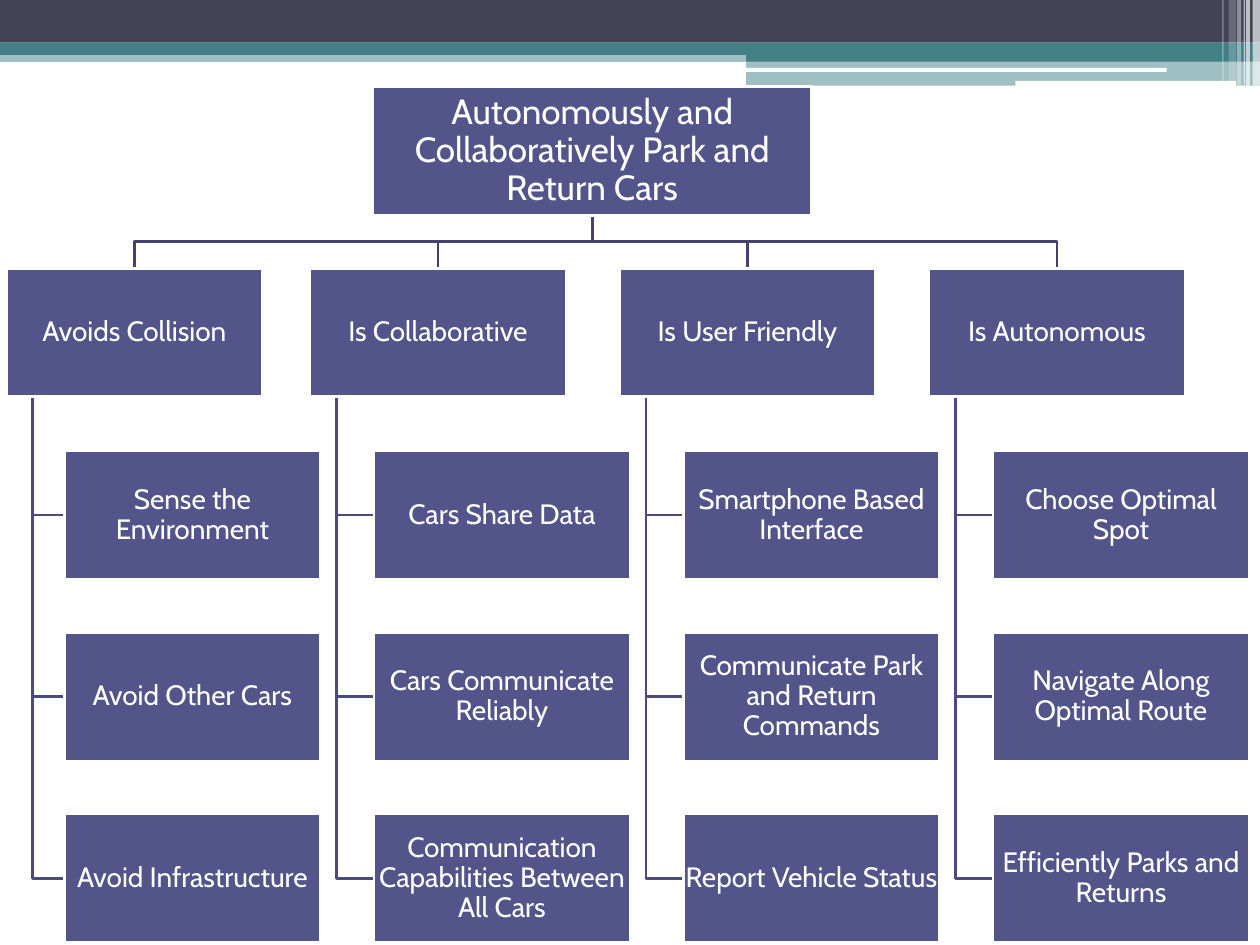
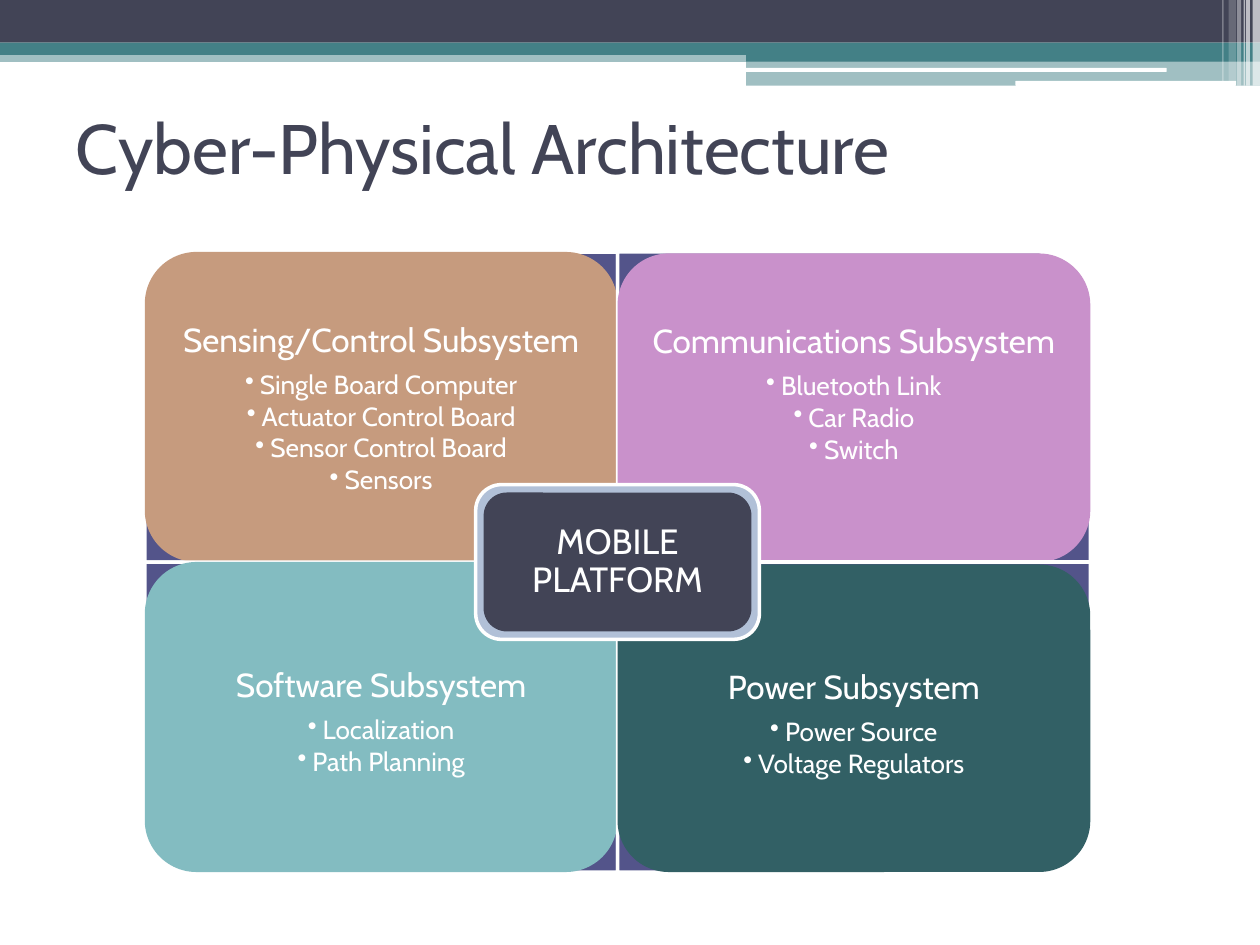
from lxml.etree import SubElement
from pptx import Presentation
from pptx.dml.color import RGBColor
from pptx.enum.shapes import MSO_SHAPE as Form
from pptx.enum.text import MSO_ANCHOR as Anchor, MSO_AUTO_SIZE as Fit, PP_ALIGN as Align
from pptx.oxml.ns import qn
from pptx.util import Cm, Pt

# Shared look
FONT = "Cabin"
WHITE, DARK, TEAL, BLUE = "FFFFFF", "424456", "438086", "53548A"
RIM, STEM, ROOF = "B1C0D7", "4B4C7D", "42436F"
WIDE, HIGH = 25.4, 19.05

# Header: left, top, width, height, colour, opacity in percent
BANDS = [
    (0, 1.02, WIDE, 0.23, TEAL, 50),
    (0, 0, WIDE, 0.86, DARK, 100),
    (0, 0.86, WIDE, 0.25, TEAL, 100),
    (15.04, 0.99, 10.36, 0.25, TEAL, 100),
    (15.04, 1.22, 10.36, 0.51, TEAL, 50),
]
BARS = [(15.01, 1.37, 8.51, 0.08), (20.47, 1.63, 4.45, 0.1)]
# Header stripes: left, width, height, opacity in percent
STRIPES = [
    (25.25, 0.15, 1.73, 65), (25.12, 0.08, 1.73, 65), (25.07, 0.03, 1.73, 60),
    (24.94, 0.08, 1.73, 40), (24.77, 0.15, 1.63, 20), (24.64, 0.03, 1.63, 30),
]

GOAL = "Autonomously and Collaboratively Park and Return Cars"
AIMS = [
    ("Avoids Collision",
     ["Sense the Environment", "Avoid Other Cars", "Avoid Infrastructure"]),
    ("Is Collaborative",
     ["Cars Share Data", "Cars Communicate Reliably",
      "Communication Capabilities Between All Cars"]),
    ("Is User Friendly",
     ["Smartphone Based Interface", "Communicate Park and Return Commands",
      "Report Vehicle Status"]),
    ("Is Autonomous",
     ["Choose Optimal Spot", "Navigate Along Optimal Route",
      "Efficiently Parks and Returns"]),
]

# Quadrants: heading, items, colour, turn of the back petal, dip of the label
PARTS = [
    ("Sensing/Control Subsystem",
     ["Single Board Computer", "Actuator Control Board", "Sensor Control Board", "Sensors"],
     "C69B7E", 270, 0),
    ("Communications Subsystem", ["Bluetooth Link", "Car Radio", "Switch"],
     "C991CB", 0, 0.03),
    ("Software Subsystem", ["Localization", "Path Planning"], "83BCC1", 180, 0),
    ("Power Subsystem", ["Power Source", "Voltage Regulators"], "326065", 90, 0.05),
]


def tint(code):
    return RGBColor.from_string(code)


def block(slide, form, x, y, w, h, fill, edge=None, width=1.5, alpha=100):
    shape = slide.shapes.add_shape(form, Cm(x), Cm(y), Cm(w), Cm(h))
    shape.shadow.inherit = False
    shape.fill.solid()
    shape.fill.fore_color.rgb = tint(fill)
    if alpha < 100:
        color = shape.element.spPr.find(".//" + qn("a:srgbClr"))
        SubElement(color, qn("a:alpha")).set("val", str(alpha * 1000))
    if edge:
        shape.line.color.rgb = tint(edge)
        shape.line.width = Pt(width)
    else:
        shape.line.fill.background()
    return shape


def pad(frame, side, top=None):
    frame.margin_left = frame.margin_right = frame.margin_bottom = Cm(side)
    frame.margin_top = Cm(side if top is None else top)


def write(para, text, size, color=WHITE):
    run = para.add_run()
    run.text = text
    run.font.name = FONT
    run.font.size = Pt(size)
    run.font.color.rgb = tint(color)


def center(para, text, size):
    para.alignment = Align.CENTER
    para.line_spacing = 0.9
    write(para, text, size)


def bullet(para):
    props = para._p.get_or_add_pPr()
    props.set("marL", str(Cm(0.3)))
    props.set("indent", str(Cm(-0.3)))
    color = SubElement(props, qn("a:buClr"))
    SubElement(color, qn("a:srgbClr")).set("val", WHITE)
    SubElement(props, qn("a:buChar")).set("char", "•")


def header(deck, slide):
    """Draw the header and hand it to the master, behind its placeholders."""
    shapes = [block(slide, Form.RECTANGLE, x, y, w, h, fill, alpha=alpha)
              for x, y, w, h, fill, alpha in BANDS]
    shapes += [block(slide, Form.ROUNDED_RECTANGLE, *bar, WHITE) for bar in BARS]
    shapes += [block(slide, Form.RECTANGLE, x, 0, w, h, WHITE, alpha=alpha)
               for x, w, h, alpha in STRIPES]
    tree = deck.slide_master.shapes.element
    for i, shape in enumerate(shapes):
        shape.element.nvSpPr.cNvPr.set("id", str(100 + i))
        tree.insert(2 + i, shape.element)


def wire(slide, color, start, *rest):
    pen = slide.shapes.build_freeform(Cm(start[0]), Cm(start[1]), scale=1.0)
    pen.add_line_segments([(Cm(x), Cm(y)) for x, y in rest], close=False)
    shape = pen.convert_to_shape()
    shape.shadow.inherit = False
    shape.fill.background()
    shape.line.color.rgb = tint(color)
    shape.line.width = Pt(1.5)


def node(slide, x, y, w, h, text, size=16):
    shape = block(slide, Form.RECTANGLE, x, y, w, h, BLUE, WHITE)
    frame = shape.text_frame
    frame.vertical_anchor = Anchor.MIDDLE
    pad(frame, 0.03)
    center(frame.paragraphs[0], text, size)


def goals(slide, x, y):
    """Goal tree with its top left corner at x, y."""
    w, h, step, rise = 5.16, 2.59, 6.24, 3.66
    top_x, top_w = x + 7.39, 8.84
    mid, foot = top_x + top_w / 2, y + h
    head_y = foot + 1.07
    cols = []
    for i, (aim, tasks) in enumerate(AIMS):
        kid_x = x + 1.17 + i * step
        head_x = max(x, kid_x - 1.29)
        kids = [(kid_x, head_y + (k + 1) * rise + 0.02, task)
                for k, task in enumerate(tasks)]
        cols.append((head_x, aim, kids))

    # Lines lie behind the boxes
    for head_x, _, kids in cols:
        stem, bend, end = head_x + 0.53, (foot + head_y) / 2, head_x + w / 2
        for kid_x, kid_y, _ in kids:
            wire(slide, STEM, (stem, head_y + h), (stem, kid_y + h / 2),
                 (kid_x, kid_y + h / 2))
        wire(slide, ROOF, (mid, foot), (mid, bend), (end, bend), (end, head_y))

    # Boxes
    node(slide, top_x, y, top_w, h, GOAL, 20)
    for head_x, aim, kids in cols:
        node(slide, head_x, head_y, w, h, aim)
        for kid_x, kid_y, task in kids:
            node(slide, kid_x, kid_y, w, h, task)


def petal(slide, x, y, w, h, turn):
    """One-corner-rounded back that fills its cell after the turn."""
    pw, ph = (h, w) if turn % 180 else (w, h)
    shape = block(slide, Form.ROUND_1_RECTANGLE, x + (w - pw) / 2, y + (h - ph) / 2,
                  pw, ph, BLUE, WHITE, 2)
    shape.rotation = turn


def label(slide, x, y, w, h, name, items, fill, top):
    frame = block(slide, Form.ROUNDED_RECTANGLE, x, y, w, h, fill).text_frame
    frame.vertical_anchor = Anchor.TOP
    pad(frame, 0.39, top)
    center(frame.paragraphs[0], name, 19)
    for i, item in enumerate(items):
        para = frame.add_paragraph()
        para.level = 1
        para.space_before = Pt(2 if i else 6.8)
        center(para, item, 15)
        bullet(para)


def hub(slide, x, y):
    """Framed plate centred on x, y."""
    w, h, rim = 5.72, 3.12, 0.16
    left, top = x - w / 2, y - h / 2
    block(slide, Form.ROUNDED_RECTANGLE, left, top, w, h, RIM, WHITE, 2)
    plate = block(slide, Form.ROUNDED_RECTANGLE, left + rim, top + rim,
                  w - 2 * rim, h - 2 * rim, DARK)
    frame = plate.text_frame
    frame.vertical_anchor = Anchor.MIDDLE
    pad(frame, 0.2)
    center(frame.paragraphs[0], "MOBILE PLATFORM", 20)


def matrix(slide, x, y, w, h):
    """Four quadrants around a hub, inside the given box."""
    cw, ch = w / 2, h / 2
    for i, (name, items, fill, turn, dip) in enumerate(PARTS):
        row, col = divmod(i, 2)
        cx, cy = x + col * cw, y + row * ch
        petal(slide, cx, cy, cw, ch, turn)
        label(slide, cx, cy + dip, cw, ch - dip, name, items, fill,
              1.85 if row else 1.14)
    hub(slide, x + cw, y + ch)


def title(slide, text):
    shape = slide.shapes.title
    shape.left, shape.top, shape.width, shape.height = Cm(1.27), Cm(1.47), Cm(22.86), Cm(2.97)
    frame = shape.text_frame
    frame.auto_size = Fit.NONE
    frame.vertical_anchor = Anchor.MIDDLE
    frame.paragraphs[0].alignment = Align.LEFT
    write(frame.paragraphs[0], text, 40, DARK)


def main():
    deck = Presentation()
    deck.slide_width, deck.slide_height = Cm(WIDE), Cm(HIGH)
    only, blank = deck.slide_layouts[5], deck.slide_layouts[6]

    # Goal tree
    slide = deck.slides.add_slide(blank)
    header(deck, slide)
    goals(slide, 0.13, 1.75)

    # Architecture
    slide = deck.slides.add_slide(only)
    title(slide, "Cyber-Physical Architecture")
    matrix(slide, 2.92, 5.08, 19.06, 12.5)

    deck.save("out.pptx")


if __name__ == "__main__":
    main()
